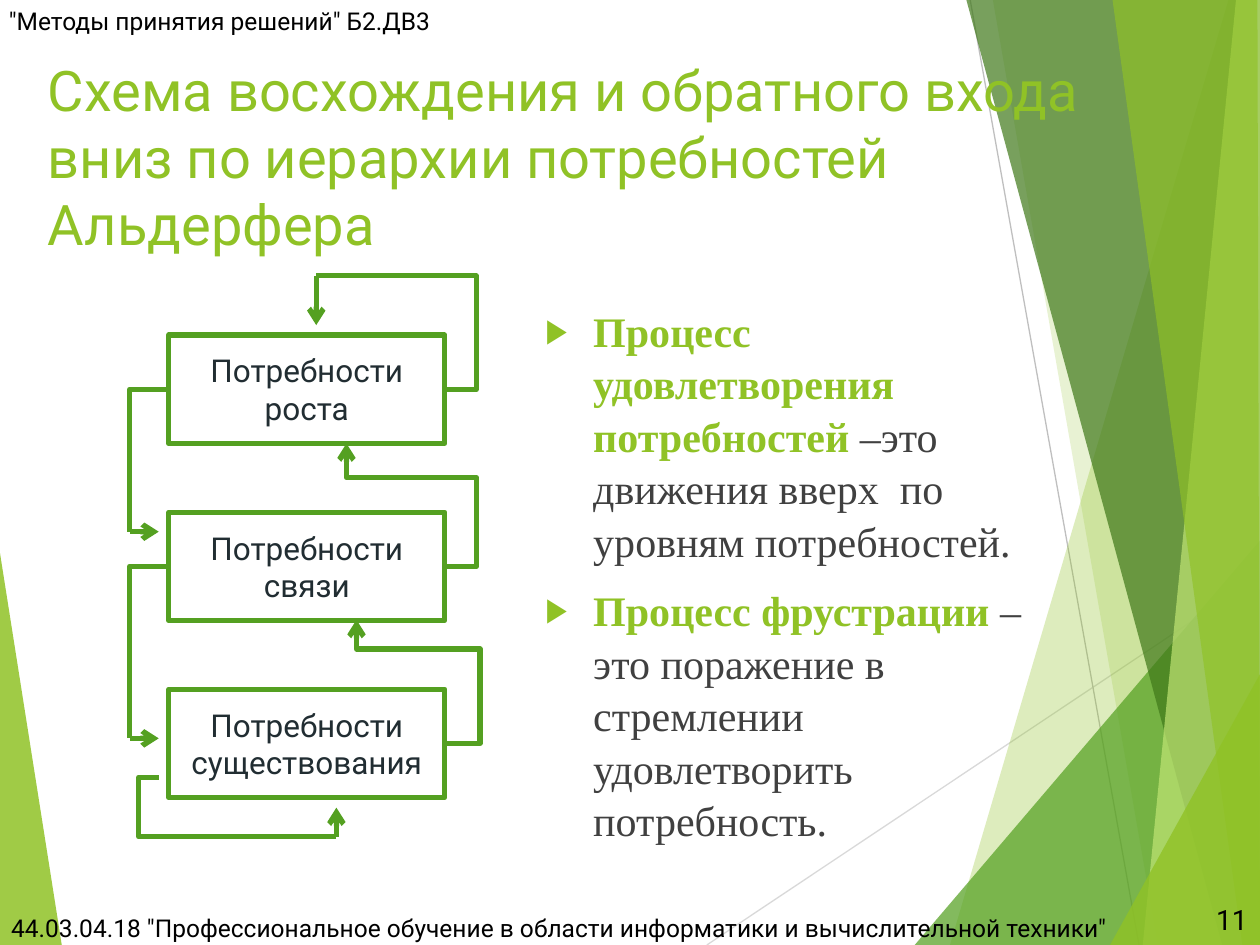
import pptx
import pptx.dml.color
import pptx.enum.shapes
import pptx.enum.text
import pptx.oxml
import pptx.oxml.ns
import pptx.util

Inches = pptx.util.Inches
Pt = pptx.util.Pt
qn = pptx.oxml.ns.qn
ALIGN = pptx.enum.text.PP_ALIGN
ANCHOR = pptx.enum.text.MSO_ANCHOR

LIME, GREEN, BLACK = "90C226", "54A021", "000000"

# Outline, colour and opacity in percent, from back to front
FACETS = [
    ([(0, 4.39), (0.49, 7.5), (0, 7.5)], LIME, 85),
    ([(9.75, 0), (10, 0), (10, 7.5), (7.54, 7.5)], LIME, 30),
    ([(7.88, 0), (10, 0), (10, 7.5), (9.19, 7.5)], LIME, 20),
    ([(7.26, 7.5), (10, 4.29), (10, 7.5)], GREEN, 72),
    ([(7.67, 0), (10, 0), (10, 7.5), (9.7, 7.5)], "3F7819", 70),
    ([(9.81, 0), (10, 0), (10, 7.5), (9.07, 7.5)], "C0E474", 70),
    ([(8.83, 0), (9.98, 0), (10, 7.5), (9.86, 7.5)], LIME, 65),
    ([(8.81, 7.5), (10, 5.35), (10, 7.5)], LIME, 80),
]
NEEDS = ["Потребности роста", "Потребности связи", "Потребности существования"]
PROCESSES = [
    ("Процесс удовлетворения потребностей ",
     "–это движения вверх  по уровням потребностей."),
    ("Процесс фрустрации ", "– это поражение в стремлении удовлетворить потребность."),
]
BOX_LEFT, BOX_TOP, BOX_WIDTH, BOX_HEIGHT, BOX_STEP = 1.34, 2.66, 2.19, 0.86, 1.405


def rgb(color):
    return pptx.dml.color.RGBColor.from_string(color)


def add_span(para, text, size, color, font="Roboto", bold=False):
    span = para.add_run()
    span.text = text
    span.font.name = font
    span.font.size = Pt(size)
    span.font.bold = bold
    span.font.color.rgb = rgb(color)


def add_facet(slide, points, color, opacity):
    corners = [(Inches(x), Inches(y)) for x, y in points]
    builder = slide.shapes.build_freeform(*corners[0])
    builder.add_line_segments(corners[1:], close=True)
    facet = builder.convert_to_shape()
    facet.shadow.inherit = False
    facet.line.fill.background()
    facet.fill.solid()
    facet.fill.fore_color.rgb = rgb(color)
    color_node = facet._element.spPr.find(qn("a:solidFill"))[0]
    pptx.oxml.ns  # namespace helpers
    alpha = color_node.makeelement(qn("a:alpha"), {"val": str(opacity * 1000)})
    color_node.append(alpha)


def add_line(slide, begin, end, color=GREEN, width=3, arrow=False):
    ends = [Inches(value) for value in (*begin, *end)]
    line = slide.shapes.add_connector(pptx.enum.shapes.MSO_CONNECTOR.STRAIGHT, *ends)
    line.line.color.rgb = rgb(color)
    line.line.width = Pt(width)
    properties = line._element.spPr
    if arrow:
        outline = properties.find(qn("a:ln"))
        outline.append(outline.makeelement(qn("a:tailEnd"), {"type": "arrow"}))
    properties.append(properties.makeelement(qn("a:effectLst"), {}))
    return line


def add_bent_line(slide, begin, end, turns=(), arrow=False):
    """Draw an elbow line; turns holds the x, then the y, of its inner segments."""
    line = add_line(slide, begin, end, arrow=arrow)
    geometry = line._element.spPr.find(qn("a:prstGeom"))
    geometry.set("prst", f"bentConnector{len(turns) + 2}")
    guides = geometry.find(qn("a:avLst"))
    for number, (turn, start, stop) in enumerate(zip(turns, begin, end), 1):
        share = round((turn - start) / (stop - start) * 100000)
        guides.append(guides.makeelement(
            qn("a:gd"), {"name": f"adj{number}", "fmla": f"val {share}"}))


def add_text_box(slide, left, top, width, height, anchor=ANCHOR.MIDDLE):
    box = slide.shapes.add_textbox(
        Inches(left), Inches(top), Inches(width), Inches(height))
    box.text_frame.word_wrap = True
    box.text_frame.vertical_anchor = anchor
    return box.text_frame


def add_need(slide, text, top):
    box = slide.shapes.add_shape(
        pptx.enum.shapes.MSO_SHAPE.RECTANGLE,
        Inches(BOX_LEFT), Inches(top), Inches(BOX_WIDTH), Inches(BOX_HEIGHT))
    box.shadow.inherit = False
    box.fill.solid()
    box.fill.fore_color.rgb = rgb("FFFFFF")
    box.line.color.rgb = rgb(GREEN)
    box.line.width = Pt(3)
    box.text_frame.word_wrap = True
    box.text_frame.vertical_anchor = ANCHOR.MIDDLE
    para = box.text_frame.paragraphs[0]
    para.alignment = ALIGN.CENTER
    add_span(para, text, 18, "212D32")


def add_bullet(para):
    properties = para._p.get_or_add_pPr()
    properties.set("marL", str(Inches(0.38)))
    properties.set("indent", str(-Inches(0.38)))
    color = properties.makeelement(qn("a:buClr"), {})
    color.append(color.makeelement(qn("a:srgbClr"), {"val": LIME}))
    properties.append(color)
    for tag, name, value in (("a:buSzPct", "val", "80000"),
                             ("a:buFont", "typeface", "Arial"),
                             ("a:buChar", "char", "▶")):
        properties.append(properties.makeelement(qn(tag), {name: value}))


def add_backdrop(slide):
    left_facet, *right_facets = FACETS
    add_facet(slide, *left_facet)
    add_line(slide, (5.61, 7.5), (10, 4.57), "D9D9D9", 0.75)
    add_line(slide, (7.7, 0), (9.04, 7.5), "BFBFBF", 0.75)
    for facet in right_facets:
        add_facet(slide, *facet)


def set_title(slide, text):
    title = slide.shapes.title
    title.left, title.top = Inches(0.28), Inches(0.39)
    title.width, title.height = Inches(9.37), Inches(1.44)
    frame = title.text_frame
    frame.word_wrap = True
    frame.auto_size = pptx.enum.text.MSO_AUTO_SIZE.NONE
    frame.vertical_anchor = ANCHOR.TOP
    para = frame.paragraphs[0]
    para.alignment = ALIGN.LEFT
    add_span(para, text, 32, LIME)
    slide.shapes._spTree.append(title._element)  # in front of the backdrop


def add_processes(slide):
    frame = add_text_box(slide, 4.23, 2.36, 4.08, 4.24, ANCHOR.TOP)
    for number, (term, meaning) in enumerate(PROCESSES):
        para = frame.add_paragraph() if number else frame.paragraphs[0]
        para.line_spacing = 1.04
        para.space_before = Pt(10)
        add_bullet(para)
        add_span(para, term, 24, LIME, "Times New Roman", bold=True)
        add_span(para, meaning, 24, "404040", "Times New Roman")


def add_hierarchy(slide):
    for number, need in enumerate(NEEDS):
        add_need(slide, need, BOX_TOP + number * BOX_STEP)
    right = BOX_LEFT + BOX_WIDTH
    growth, relation, existence = (
        BOX_TOP + BOX_HEIGHT / 2 + number * BOX_STEP for number in range(3))

    # Upwards, on the right
    add_bent_line(slide, (right, existence), (2.83, 4.92), (3.81, 5.15), arrow=True)
    add_bent_line(slide, (right, relation), (2.75, 3.52), (3.78, 3.79), arrow=True)
    add_bent_line(slide, (right, growth), (2.51, 2.19), (3.78,))
    add_line(slide, (2.51, 2.19), (2.51, 2.58), arrow=True)

    # Downwards, on the left
    for middle, bottom in ((growth, 4.22), (relation, 5.86)):
        add_bent_line(slide, (BOX_LEFT, middle), (1.03, bottom))
        add_line(slide, (1.03, bottom), (1.26, bottom), arrow=True)
    add_bent_line(slide, (1.26, 6.17), (2.67, 6.64), (1.1,))
    add_line(slide, (2.67, 6.64), (2.67, 6.41), arrow=True)


def add_margin_texts(slide):
    header = add_text_box(slide, 0, 0, 7.67, 0.33)
    header.margin_left = header.margin_right = Inches(0.07)
    header.margin_top = header.margin_bottom = Inches(0.04)
    add_span(header.paragraphs[0], '"Методы принятия решений" Б2.ДВ3', 14, BLACK)
    footer = add_text_box(slide, -0.01, 7.21, 9.45, 0.3)
    add_span(footer.paragraphs[0],
             '44.03.04.18 "Профессиональное обучение в области информатики '
             'и вычислительной техники"', 14, BLACK)
    number = add_text_box(slide, 9.44, 7.1, 0.56, 0.4).paragraphs[0]
    number.alignment = ALIGN.RIGHT
    add_span(number, "11", 16, BLACK)


def main():
    deck = pptx.Presentation()
    deck.slide_width, deck.slide_height = Inches(10), Inches(7.5)
    slide = deck.slides.add_slide(deck.slide_layouts[5])
    add_backdrop(slide)
    set_title(slide, "Схема восхождения и обратного входа вниз "
                     "по иерархии потребностей Альдерфера")
    add_processes(slide)
    add_hierarchy(slide)
    add_margin_texts(slide)
    deck.save("out.pptx")


if __name__ == "__main__":
    main()
